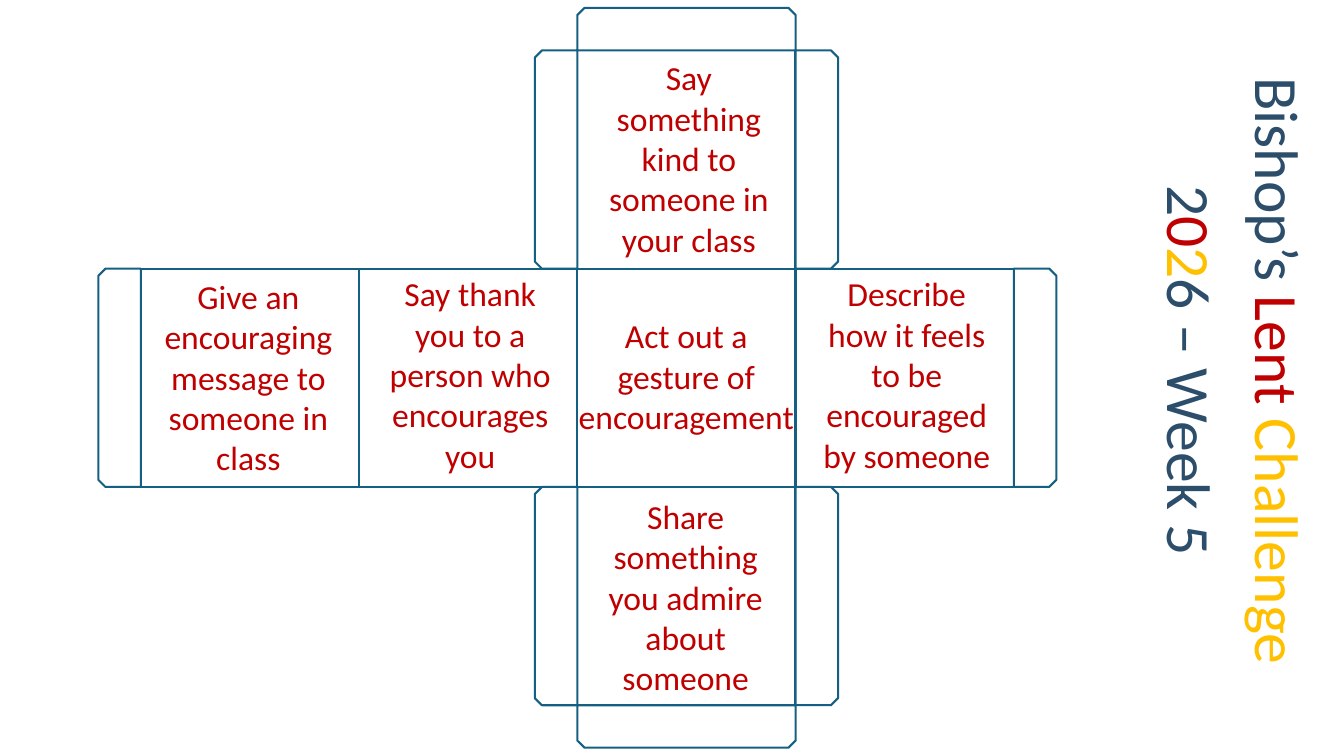
import pptx
import pptx.util
import pptx.dml.color
import pptx.enum.shapes
import pptx.enum.text

Cm, Pt = pptx.util.Cm, pptx.util.Pt
Shape = pptx.enum.shapes.MSO_SHAPE
Text = pptx.enum.text
hues = {"paper": "FFFFFF", "edge": "156082", "navy": "2D4E6B",
        "red": "C00000", "gold": "FFC000"}


def tint(name):
    return pptx.dml.color.RGBColor.from_string(hues[name])


def style(run, size, hue):
    for key, value in {"name": "Calibri", "size": Pt(size)}.items():
        setattr(run.font, key, value)
    run.font.color.rgb = tint(hue)


deck = pptx.Presentation()
deck.slide_width, deck.slide_height = Cm(33.87), Cm(19.05)
slide = deck.slides.add_slide(deck.slide_layouts[5])

# Title, turned to read down the right side
title = slide.shapes.title
place = {"left": Cm(22.76), "top": Cm(6.48), "width": Cm(16.08),
         "height": Cm(5.72), "rotation": 90}
for key, value in place.items():
    setattr(title, key, value)
frame = title.text_frame
form = {"word_wrap": True, "vertical_anchor": Text.MSO_ANCHOR.TOP,
        "auto_size": Text.MSO_AUTO_SIZE.NONE}
for key, value in form.items():
    setattr(frame, key, value)
para = frame.paragraphs[0]
form = {"alignment": Text.PP_ALIGN.CENTER, "line_spacing": 1.19,
        "space_before": Pt(0), "space_after": Pt(6)}
for key, value in form.items():
    setattr(para, key, value)
for words, hue in [("Bishop’s ", "navy"), ("Lent ", "red"),
                   ("Challenge ", "gold"), ("2", "navy"), ("0", "red"),
                   ("2", "gold"), ("6 – Week 5", "navy")]:
    run = para.add_run()
    run.text = words
    style(run, 44, hue)

# Cube net: faces by column and row, flaps by face and turn
side, flap = 5.5, 1.07
left, top = 3.55, 1.27
faces = [(3, 1), (2, 1), (2, 0), (2, 2), (1, 1), (0, 1)]
flaps = [(2, 0, 0), (3, 1, 90), (2, 0, 270), (0, 1, 270),
         (2, 2, 270), (2, 2, 90), (2, 0, 90), (2, 2, 180)]
ways = {0: (0, -1), 90: (1, 0), 180: (0, 1), 270: (-1, 0)}
reach = (side + flap) / 2

parts = [(Shape.RECTANGLE, col, row, 0, 0, 0, side) for col, row in faces]
parts += [(Shape.SNIP_2_SAME_RECTANGLE, col, row, turn,
           ways[turn][0] * reach, ways[turn][1] * reach, flap)
          for col, row, turn in flaps]
for kind, col, row, turn, dx, dy, high in parts:
    midx = left + (col + 0.5) * side + dx
    midy = top + (row + 0.5) * side + dy
    part = slide.shapes.add_shape(kind, Cm(midx - side / 2),
                                  Cm(midy - high / 2), Cm(side), Cm(high))
    part.rotation = turn
    part.shadow.inherit = False
    part.fill.solid()
    part.fill.fore_color.rgb = tint("paper")
    part.line.color.rgb = tint("edge")
    part.line.width = Pt(1.5)

# Challenge on each face
tasks = [
    (14.86, 1.32, 5, 5.38, "Say something kind to someone in your class"),
    (20.35, 6.76, 5, 5.38, "Describe how it feels to be encouraged by someone"),
    (14.27, 7.82, 6.05, 3.33, "Act out a gesture of encouragement"),
    (9.35, 6.76, 5, 5.38, "Say thank you to a person who encourages you"),
    (3.76, 6.83, 5, 5.38, "Give an encouraging message to someone in class"),
    (14.78, 12.37, 5, 5.38, "Share something you admire about someone"),
]
for x, y, wide, high, words in tasks:
    box = slide.shapes.add_textbox(Cm(x), Cm(y), Cm(wide), Cm(high))
    box.text_frame.word_wrap = True
    para = box.text_frame.paragraphs[0]
    para.alignment = Text.PP_ALIGN.CENTER
    run = para.add_run()
    run.text = words
    style(run, 24, "red")

deck.save("out.pptx")
